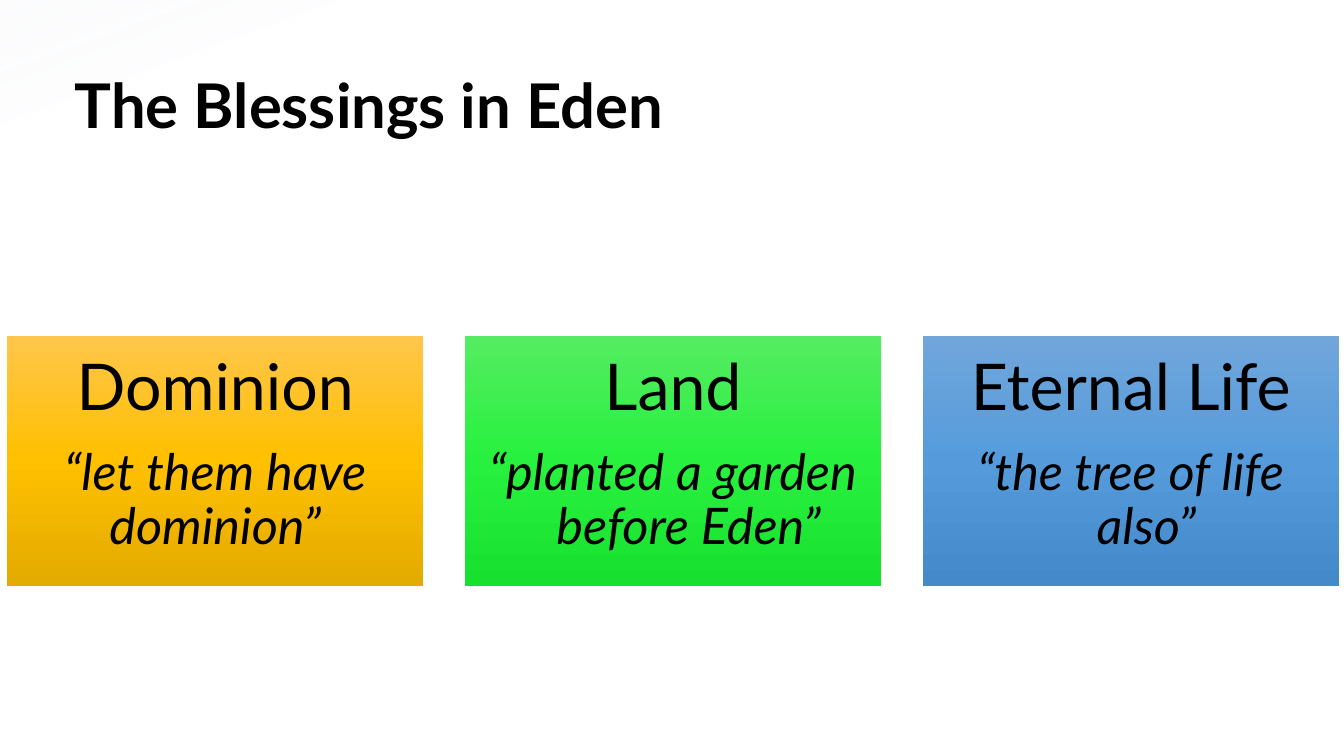
from lxml import etree
from pptx import Presentation
from pptx.dml.color import RGBColor
from pptx.enum.shapes import MSO_SHAPE
from pptx.enum.text import MSO_ANCHOR, MSO_AUTO_SIZE, PP_ALIGN
from pptx.oxml.ns import qn
from pptx.util import Inches, Pt

RECT = MSO_SHAPE.RECTANGLE
TOP, MIDDLE = MSO_ANCHOR.TOP, MSO_ANCHOR.MIDDLE
LEFT, CENTER = PP_ALIGN.LEFT, PP_ALIGN.CENTER
NO_FIT = MSO_AUTO_SIZE.NONE

FONT = "Lato"
BLACK = RGBColor(0x00, 0x00, 0x00)
WHITE = RGBColor(0xFF, 0xFF, 0xFF)
MIST = RGBColor(0xF6, 0xF8, 0xFC)
GOLD = [RGBColor(0xFF, 0xC6, 0x4B), RGBColor(0xFF, 0xC0, 0x00), RGBColor(0xE3, 0xAB, 0x00)]
GREEN = [RGBColor(0x56, 0xEC, 0x62), RGBColor(0x27, 0xF1, 0x3E), RGBColor(0x18, 0xE0, 0x2F)]
BLUE = [RGBColor(0x71, 0xA6, 0xDB), RGBColor(0x55, 0x9B, 0xDB), RGBColor(0x44, 0x8A, 0xCA)]

# Card row: left edge, top, size and column step in inches
CARD_X, CARD_Y, CARD_W, CARD_H, STEP = 0.07, 3.33, 4.13, 2.48, 4.54
INSET, HANG = 0.19, 0.31

TITLE_FORMAT = {"size": Pt(44), "bold": True}
HEAD_FORMAT = {"size": Pt(46)}
QUOTE_FORMAT = {"size": Pt(36), "italic": True}

# Heading, quotation, gradient colours, hanging indent
BLESSINGS = [
    ("Dominion", "“let them have dominion”", GOLD, 0),
    ("Land", "“planted a garden before Eden”", GREEN, HANG),
    ("Eternal Life", "“the tree of life also”", BLUE, HANG),
]


def set_gradient(sp, stops, angle):
    """Fill with (position %, colour, opacity %) stops, angle clockwise."""
    sp.fill.gradient()
    sp.fill.gradient_angle = 360 - angle
    gs_list = sp._element.spPr.find(qn("a:gradFill")).find(qn("a:gsLst"))
    for gs in list(gs_list):
        gs_list.remove(gs)
    for pos, color, opacity in stops:
        gs = etree.SubElement(gs_list, qn("a:gs"), pos=str(pos * 1000))
        clr = etree.SubElement(gs, qn("a:srgbClr"), val=str(color))
        if opacity < 100:
            etree.SubElement(clr, qn("a:alpha"), val=str(opacity * 1000))


def add_panel(slide, x, y, w, h, stops, angle=90):
    sp = slide.shapes.add_shape(RECT, Inches(x), Inches(y), Inches(w), Inches(h))
    sp.shadow.inherit = False
    sp.line.fill.background()
    set_gradient(sp, stops, angle)
    return sp


def write(p, text, formats, align):
    p.alignment = align
    p.line_spacing = 0.9
    r = p.add_run()
    r.text = text
    r.font.name = FONT
    r.font.color.rgb = BLACK
    for name, value in formats.items():
        setattr(r.font, name, value)


def add_corner(slide, width, height):
    stops = [(0, MIST, 25), (34, WHITE, 70), (53, WHITE, 85), (67, WHITE, 100)]
    sp = add_panel(slide, 0, 0, width, height, stops, 70)
    slide.shapes.title._element.addprevious(sp._element)  # behind the title


def add_title(slide, text):
    sp = slide.shapes.title
    sp.left, sp.top, sp.width, sp.height = map(Inches, (0.64, 0.35, 12.06, 1.45))
    tf = sp.text_frame
    tf.word_wrap, tf.auto_size, tf.vertical_anchor = True, NO_FIT, MIDDLE
    write(tf.paragraphs[0], text, TITLE_FORMAT, LEFT)


def add_card(slide, column, head, quote, colors, hang):
    stops = [(50 * i, color, 100) for i, color in enumerate(colors)]
    sp = add_panel(slide, CARD_X + column * STEP, CARD_Y, CARD_W, CARD_H, stops)
    tf = sp.text_frame
    tf.word_wrap, tf.vertical_anchor = True, TOP
    for side in ("left", "top", "right", "bottom"):
        setattr(tf, f"margin_{side}", Inches(INSET))
    p = tf.paragraphs[0]
    write(p, head, HEAD_FORMAT, CENTER)
    p.space_after = Pt(16)
    p = tf.add_paragraph()
    write(p, quote, QUOTE_FORMAT, CENTER)
    if hang:
        p_pr = p._p.get_or_add_pPr()
        p_pr.set("marL", str(Inches(hang)))
        p_pr.set("indent", str(-Inches(hang)))


def main():
    prs = Presentation()
    prs.slide_width, prs.slide_height = Inches(13.33), Inches(7.5)
    slide = prs.slides.add_slide(prs.slide_layouts[5])  # Title Only

    # Heading area
    add_corner(slide, 4.2, 2.37)
    add_title(slide, "The Blessings in Eden")

    # Row of blessings
    for column, blessing in enumerate(BLESSINGS):
        add_card(slide, column, *blessing)

    prs.save("out.pptx")


if __name__ == "__main__":
    main()
